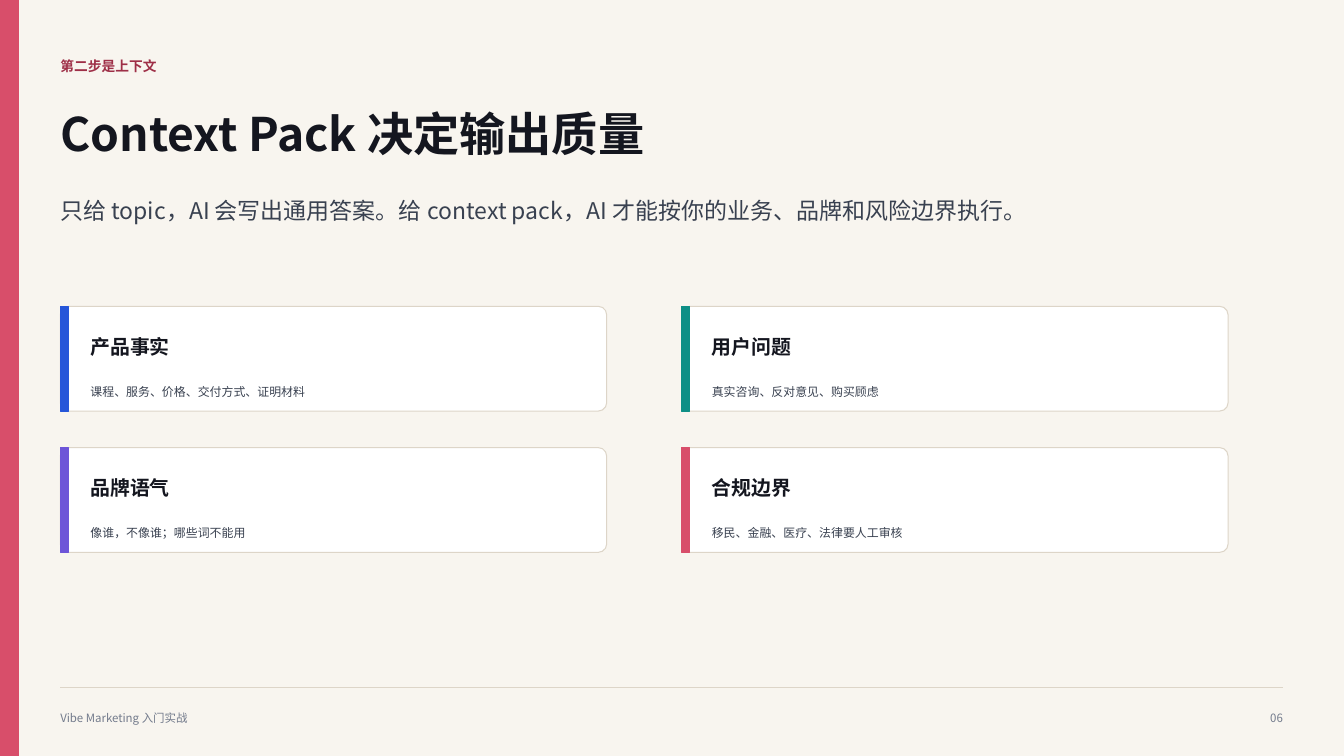
import dataclasses

import pptx
import pptx.dml.color
import pptx.enum.shapes
import pptx.enum.text
import pptx.oxml.ns
import pptx.util
from lxml import etree

Cm = pptx.util.Cm
Shape = pptx.enum.shapes.MSO_SHAPE
Align = pptx.enum.text.PP_ALIGN


@dataclasses.dataclass(frozen=True)
class Theme:
    font: str = "Noto Sans CJK SC"
    paper: str = "F8F5EF"
    white: str = "FFFFFF"
    rule: str = "DDD5C8"
    rose: str = "D84E6A"
    blue: str = "2656D9"
    teal: str = "0E8F86"
    violet: str = "6D55D8"
    stroke: float = 0.75
    foot: tuple = (8.2, "737B8C", False, 1.12)
    label: tuple = (9.8, "9E2F47", True, 1.12)
    title: tuple = (33, "14161F", True, 0.96)
    lead: tuple = (16.4, "394150", False, 1.12)
    head: tuple = (14.2, "14161F", True, 1.12)
    body: tuple = (8.5, "394150", False, 1.18)


def assign(target, values):
    for name, value in values.items():
        setattr(target, name, value)


def color(code):
    return pptx.dml.color.RGBColor.from_string(code)


class Deck:
    def __init__(self, theme):
        self.theme = theme
        self.show = pptx.Presentation()
        assign(self.show, {"slide_width": Cm(33.87), "slide_height": Cm(19.05)})
        self.slide = self.show.slides.add_slide(self.show.slide_layouts[6])
        fill = self.slide.background.fill
        fill.solid()
        fill.fore_color.rgb = color(theme.paper)

    def box(self, place, fill, line=None, bend=None):
        kind = Shape.RECTANGLE if bend is None else Shape.ROUNDED_RECTANGLE
        shape = self.slide.shapes.add_shape(kind, *map(Cm, place))
        if bend is not None:
            shape.adjustments[0] = bend
        shape.shadow.inherit = False
        shape.fill.solid()
        shape.fill.fore_color.rgb = color(fill)
        self.stroke(shape, line or fill)

    def stroke(self, shape, code):
        shape.line.color.rgb = color(code)
        shape.line.width = pptx.util.Pt(self.theme.stroke)

    def rule(self, left, right, top):
        kind = pptx.enum.shapes.MSO_CONNECTOR.STRAIGHT
        line = self.slide.shapes.add_connector(
            kind, Cm(left), Cm(top), Cm(right), Cm(top))
        self.stroke(line, self.theme.rule)
        etree.SubElement(line.element.spPr, pptx.oxml.ns.qn("a:effectLst"))

    def text(self, place, words, style, align=Align.LEFT):
        size, ink, bold, space = style
        frame = self.slide.shapes.add_textbox(*map(Cm, place)).text_frame
        assign(frame, {"word_wrap": True, "margin_left": 0, "margin_right": 0,
                       "margin_top": 0, "margin_bottom": 0})
        para = frame.paragraphs[0]
        assign(para, {"alignment": align, "line_spacing": space})
        run = para.add_run()
        run.text = words
        assign(run.font, {"name": self.theme.font, "bold": bold,
                          "size": pptx.util.Pt(size)})
        run.font.color.rgb = color(ink)
        east = etree.SubElement(run.font._element, pptx.oxml.ns.qn("a:ea"))
        east.set("typeface", self.theme.font)

    def card(self, left, top, accent, head, body):
        theme = self.theme
        self.box((left, top, 13.77, 2.64), theme.white, theme.rule, 0.08)
        self.box((left, top, 0.2, 2.64), accent)
        self.text((left + 0.76, top + 0.64, 12.5, 0.74), head, theme.head)
        self.text((left + 0.76, top + 1.9, 12.27, 0.43), body, theme.body)


def main():
    theme = Theme()
    deck = Deck(theme)
    left, right = 1.52, 32.33
    deck.box((0, 0, 0.48, 19.05), theme.rose)
    deck.rule(left, right, 17.32)
    deck.text((left, 17.88, 13.77, 0.64), "Vibe Marketing 入门实战", theme.foot)
    deck.text((right - 1.27, 17.88, 1.27, 0.64), "06", theme.foot, Align.RIGHT)
    deck.text((left, 1.42, 22.76, 0.64), "第二步是上下文", theme.label)
    deck.text((left, 2.74, 21.69, 1.47), "Context Pack 决定输出质量", theme.title)
    deck.text((left, 4.88, 24.61, 1.17),
              "只给 topic，AI 会写出通用答案。给 context pack，"
              "AI 才能按你的业务、品牌和风险边界执行。", theme.lead)
    cards = [
        (theme.blue, "产品事实", "课程、服务、价格、交付方式、证明材料"),
        (theme.teal, "用户问题", "真实咨询、反对意见、购买顾虑"),
        (theme.violet, "品牌语气", "像谁，不像谁；哪些词不能用"),
        (theme.rose, "合规边界", "移民、金融、医疗、法律要人工审核"),
    ]
    for index, card in enumerate(cards):
        row, col = divmod(index, 2)
        deck.card(left + col * 15.66, 7.72 + row * 3.56, *card)
    deck.show.save("out.pptx")


if __name__ == "__main__":
    main()
